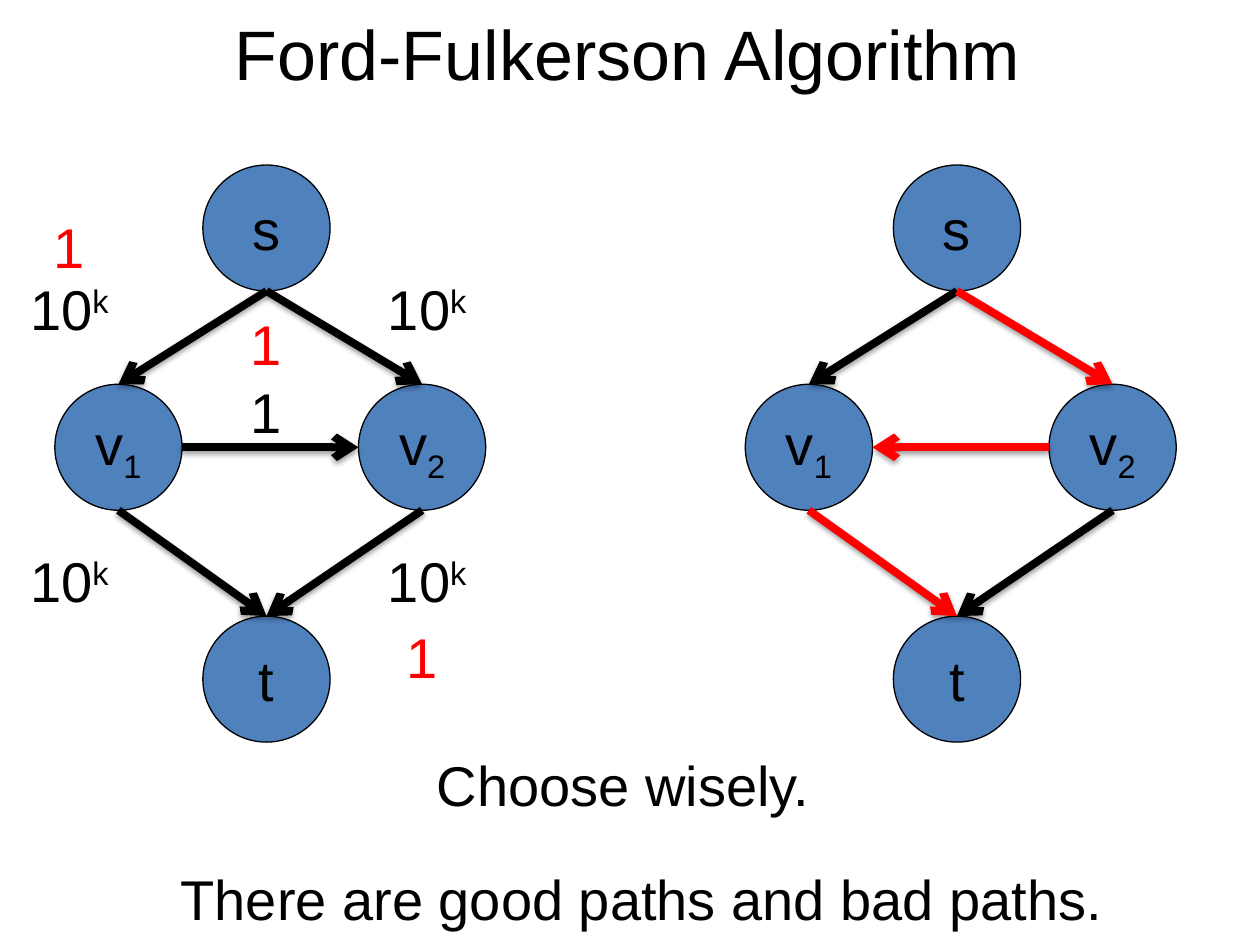
from lxml import etree
from pptx import Presentation
from pptx.dml.color import RGBColor
from pptx.enum.shapes import MSO_CONNECTOR, MSO_SHAPE
from pptx.enum.text import MSO_ANCHOR, MSO_AUTO_SIZE, PP_ALIGN
from pptx.oxml import parse_xml
from pptx.oxml.ns import nsdecls, qn
from pptx.util import Inches, Pt

BLACK = RGBColor(0x00, 0x00, 0x00)
RED = RGBColor(0xFF, 0x00, 0x00)
BLUE = RGBColor(0x4F, 0x81, 0xBD)
LEFT, CENTER = PP_ALIGN.LEFT, PP_ALIGN.CENTER
TOP, MIDDLE = MSO_ANCHOR.TOP, MSO_ANCHOR.MIDDLE
FIT_TEXT, NO_FIT = MSO_AUTO_SIZE.SHAPE_TO_FIT_TEXT, MSO_AUTO_SIZE.NONE
OVAL, STRAIGHT = MSO_SHAPE.OVAL, MSO_CONNECTOR.STRAIGHT

COLUMNS, ROWS = 100, 75
NODE_WIDTH, NODE_HEIGHT = 10.1, 10
LABEL_HEIGHT = 6.4
SUBSCRIPT, SUPERSCRIPT = -25, 30
SHADOW = (
    f'<a:effectLst {nsdecls("a")}><a:outerShdw blurRad="40000" dist="20000" dir="5400000" '
    'rotWithShape="0"><a:srgbClr val="000000"><a:alpha val="38000"/></a:srgbClr>'
    '</a:outerShdw></a:effectLst>'
)

NODES = {
    "s": (21.15, 18.1, ""),
    "v1": (9.4, 35.5, "1"),
    "v2": (33.5, 35.5, "2"),
    "t": (21.15, 53.9, ""),
}
NETWORK_EDGES = [
    ("v1", "v2", BLACK), ("s", "v1", BLACK), ("s", "v2", BLACK),
    ("v1", "t", BLACK), ("v2", "t", BLACK),
]
RESIDUAL_EDGES = [
    ("v2", "v1", RED), ("s", "v1", BLACK), ("s", "v2", RED),
    ("v1", "t", RED), ("v2", "t", BLACK),
]
UNIT_LABELS = [
    (18.9, 29.5, BLACK), (3.3, 16.4, RED), (18.9, 24.1, RED), (31.3, 48.9, RED),
]


def write_text(frame, text, script="", baseline=0, size=32, color=BLACK, align=LEFT,
               anchor=TOP, wrap=False, fit=NO_FIT):
    """Fill a text frame with text and an optional raised or lowered script."""
    frame.word_wrap = wrap
    frame.auto_size = fit
    frame.vertical_anchor = anchor
    paragraph = frame.paragraphs[0]
    paragraph.alignment = align
    for content, shift in ((text, 0), (script, baseline)):
        if not content:
            continue
        run = paragraph.add_run()
        run.text = content
        run.font.name = "Arial"
        run.font.size = Pt(size)
        run.font.color.rgb = color
        if shift:
            run._r.get_or_add_rPr().set("baseline", str(shift * 1000))


class GraphSlide:
    """Draw graph elements on a slide measured in grid columns and rows."""

    def __init__(self, presentation):
        self.slide = presentation.slides.add_slide(presentation.slide_layouts[6])
        self.column = presentation.slide_width / COLUMNS
        self.row = presentation.slide_height / ROWS

    def place(self, x, y):
        return round(x * self.column), round(y * self.row)

    def text(self, x, y, width, height, content, **style):
        box = self.slide.shapes.add_textbox(*self.place(x, y), *self.place(width, height))
        write_text(box.text_frame, content, **style)

    def label(self, x, y, width, content, **style):
        self.text(x, y, width, LABEL_HEIGHT, content, fit=FIT_TEXT, **style)

    def node(self, x, y, name, index):
        corner = self.place(x - NODE_WIDTH / 2, y - NODE_HEIGHT / 2)
        shape = self.slide.shapes.add_shape(OVAL, *corner, *self.place(NODE_WIDTH, NODE_HEIGHT))
        shape.shadow.inherit = False
        shape.fill.solid()
        shape.fill.fore_color.rgb = BLUE
        shape.line.color.rgb = BLACK
        shape.line.width = Pt(0.75)
        write_text(shape.text_frame, name, script=index, baseline=SUBSCRIPT,
                   align=CENTER, anchor=MIDDLE)

    def arrow(self, start, end, color):
        connector = self.slide.shapes.add_connector(
            STRAIGHT, *self.place(*start), *self.place(*end))
        connector.line.color.rgb = color
        connector.line.width = Pt(4.5)
        line = connector.line._get_or_add_ln()
        etree.SubElement(line, qn("a:tailEnd")).set("type", "arrow")
        connector._element.spPr.append(parse_xml(SHADOW))

    def graph(self, offset, edges):
        for name, (x, y, index) in NODES.items():
            self.node(x + offset, y, name[0], index)
        for source, target, color in edges:
            x1, y1, _ = NODES[source]
            x2, y2, _ = NODES[target]
            if y1 == y2:
                inset = NODE_WIDTH / 2 if x2 > x1 else -NODE_WIDTH / 2
                x1, x2 = x1 + inset, x2 - inset
            else:
                y1, y2 = y1 + NODE_HEIGHT / 2, y2 - NODE_HEIGHT / 2
            self.arrow((x1 + offset, y1), (x2 + offset, y2), color)


def main():
    presentation = Presentation()
    presentation.slide_width, presentation.slide_height = Inches(10), Inches(7.5)
    page = GraphSlide(presentation)
    page.text(0.5, 0.6, 98.6, 7.1, "Ford-Fulkerson Algorithm", size=40,
              align=CENTER, anchor=MIDDLE, wrap=True)
    page.graph(0, NETWORK_EDGES)
    page.graph(54.8, RESIDUAL_EDGES)
    for y in (21.3, 42.9):
        for x in (1.4, 29.8):
            page.label(x, y, 8.5, "10", script="k", baseline=SUPERSCRIPT)
    for x, y, color in UNIT_LABELS:
        page.label(x, y, 4.5, "1", color=color)
    page.label(12.4, 68.1, 77.1, "There are good paths and bad paths.", align=CENTER)
    page.label(33.5, 59.1, 31.9, "Choose wisely.", align=CENTER)
    presentation.save("out.pptx")


if __name__ == "__main__":
    main()
